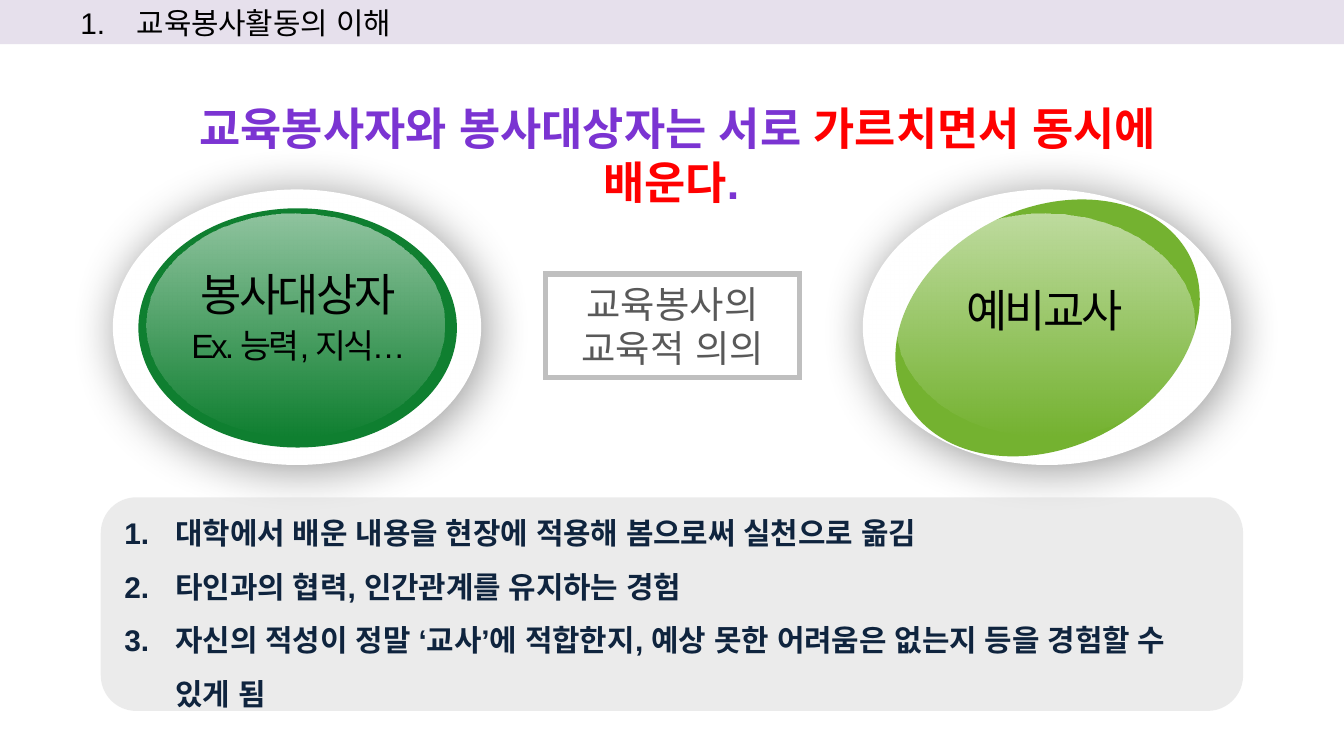
from dataclasses import dataclass

from pptx import Presentation
from pptx.dml.color import RGBColor
from pptx.enum.shapes import MSO_SHAPE
from pptx.enum.text import MSO_ANCHOR, MSO_AUTO_SIZE, PP_ALIGN
from pptx.oxml import parse_xml
from pptx.oxml.ns import nsdecls, qn
from pptx.util import Inches, Pt

RECT, OVAL, ROUND = MSO_SHAPE.RECTANGLE, MSO_SHAPE.OVAL, MSO_SHAPE.ROUNDED_RECTANGLE
LEFT, CENTER, JUSTIFY = PP_ALIGN.LEFT, PP_ALIGN.CENTER, PP_ALIGN.JUSTIFY
TOP, MIDDLE = MSO_ANCHOR.TOP, MSO_ANCHOR.MIDDLE
GROW = MSO_AUTO_SIZE.SHAPE_TO_FIT_TEXT


@dataclass(frozen=True)
class Theme:
    font: str = "Arial"
    black: str = "000000"
    white: str = "FFFFFF"
    band: str = "E6E0EC"
    purple: str = "7B34D2"
    red: str = "FF0000"
    green: str = "0F7F30"
    lime: str = "74B230"
    edge: str = "BFBFBF"
    gray: str = "595959"
    panel: str = "D9D9D9"
    navy: str = "0F243E"
    body: int = 16
    small: int = 18
    label: int = 20
    title: int = 24


class Deck:
    def __init__(self, theme):
        self.theme = theme
        self.prs = Presentation()
        self.prs.slide_width = Inches(10)
        self.prs.slide_height = Inches(10 * 9 / 16)
        self.slide = self.prs.slides.add_slide(self.prs.slide_layouts[6])

    def fade(self, shape, *levels):
        """Set the opacity in percent of each fill colour in turn."""
        for color, level in zip(shape.element.spPr.iter(qn("a:srgbClr")), levels):
            color.append(parse_xml(f'<a:alpha {nsdecls("a")} val="{level * 1000}"/>'))

    def shape(self, kind, x, y, w, h, fill=None):
        item = self.slide.shapes.add_shape(kind, Inches(x), Inches(y), Inches(w), Inches(h))
        item.shadow.inherit = False
        item.line.fill.background()
        if fill:
            item.fill.solid()
            item.fill.fore_color.rgb = RGBColor.from_string(fill)
        else:
            item.fill.background()
        return item

    def box(self, x, y, w, h):
        return self.slide.shapes.add_textbox(Inches(x), Inches(y), Inches(w), Inches(h))

    def frame(self, item, anchor, grow=False):
        frame = item.text_frame
        frame.word_wrap = True
        frame.vertical_anchor = anchor
        if grow:
            frame.auto_size = GROW
        return frame

    def para(self, frame, runs, size, color, align=CENTER, bold=False, hang=None):
        """Add a paragraph; runs are (text, colour or None), hang is (margin, indent)."""
        para = frame.paragraphs[0]
        if para.runs:
            para = frame.add_paragraph()
        para.alignment = align
        font = para.font
        font.name, font.size, font.bold = self.theme.font, Pt(size), bold
        font.color.rgb = RGBColor.from_string(color)
        # Hangul and curly quotes follow the East Asian face
        font._element.find(qn("a:latin")).addnext(
            parse_xml(f'<a:ea {nsdecls("a")} typeface="{self.theme.font}"/>'))
        for text, tint in runs:
            run = para.add_run()
            run.text = text
            if tint:
                run.font.color.rgb = RGBColor.from_string(tint)
        if hang:
            props = para._p.get_or_add_pPr()
            props.set("marL", str(Inches(hang[0])))
            props.set("indent", str(Inches(hang[1])))
        return para

    def gloss(self, x, y, w, h):
        item = self.shape(OVAL, x, y, w, h)
        item.fill.gradient()
        item.fill.gradient_angle = 270
        for stop, place in zip(item.fill.gradient_stops, (0, 1)):
            stop.color.rgb = RGBColor.from_string(self.theme.white)
            stop.position = place
        self.fade(item, 54, 0)

    def badge(self, x, y, color, turn=0):
        """Draw a glossy oval on a white plate that casts a shadow."""
        plate = self.shape(OVAL, x, y, 2.74, 2.05, self.theme.white)
        effects = plate.element.spPr.find(qn("a:effectLst"))
        effects.append(parse_xml(
            f'<a:outerShdw {nsdecls("a")} blurRad="{Pt(26)}" dist="{Pt(3)}" '
            f'dir="2700000" algn="tl" rotWithShape="0">'
            f'<a:srgbClr val="{self.theme.black}"><a:alpha val="41000"/></a:srgbClr>'
            f'</a:outerShdw>'))
        self.gloss(x + 0.04, y + 0.04, 2.67, 2)
        self.shape(OVAL, x + 0.19, y + 0.14, 2.37, 1.78, color).rotation = turn
        self.gloss(x + 0.25, y + 0.18, 2.22, 1.66)

    def label(self, x, y, h, lines):
        frame = self.frame(self.box(x, y, 2.32, h), MIDDLE, True)
        for text, size in lines:
            para = self.para(frame, [(text, None)], size, self.theme.black, hang=(0.38, -0.38))
            para.line_spacing = Pt(15)
            para.space_before = Pt(size / 2)
            para.runs[0].font._element.set("spc", "-150")

    def points(self, frame, lines):
        for text in lines:
            para = self.para(frame, [(text, None)], self.theme.body, self.theme.navy,
                             LEFT, True, (0.38, -0.38))
            para.line_spacing = 1.5
            props = para._p.get_or_add_pPr()
            mark = parse_xml(f'<a:buAutoNum {nsdecls("a")} type="arabicPeriod"/>')
            props.find(qn("a:defRPr")).addprevious(mark)


def main():
    theme = Theme()
    deck = Deck(theme)

    # Header band
    band = deck.shape(RECT, 0, 0, 10, 0.33, theme.band)
    deck.para(deck.frame(band, MIDDLE), [("1.\t교육봉사활동의 이해 ", None)],
              theme.body, theme.black, JUSTIFY, hang=(0.92, -0.42))

    # Two partners
    deck.badge(6.42, 1.41, theme.lime, 333.5)
    deck.badge(0.84, 1.41, theme.green)

    # Centre box
    centre = deck.shape(RECT, 4.06, 2.04, 1.89, 0.77)
    centre.line.color.rgb = RGBColor.from_string(theme.edge)
    centre.line.width = Pt(3)
    centre.element.spPr.find(qn("a:ln")).append(
        parse_xml(f'<a:miter {nsdecls("a")} lim="800000"/>'))
    deck.para(deck.frame(centre, TOP, True), [("교육봉사의 교육적 의의", None)],
              theme.label, theme.gray)

    # Key message
    title = deck.frame(deck.box(0.82, 0.7, 8.35, 0.91), TOP, True)
    deck.para(title, [(" 교육봉사자와 봉사대상자는 서로 ", None),
                      ("가르치면서 동시에 배운다", theme.red), (".", None)],
              theme.title, theme.purple, bold=True)

    # Partner names
    deck.label(1.06, 2.1, 0.69, [("봉사대상자", theme.title),
                                 ("Ex. 능력, 지식…", theme.small)])
    deck.label(6.65, 2.23, 0.34, [("예비교사 ", theme.title)])

    # Numbered benefits
    panel = deck.shape(ROUND, 0.75, 3.7, 8.5, 1.59, theme.panel)
    deck.fade(panel, 50)
    deck.points(deck.frame(panel, MIDDLE), [
        "대학에서 배운 내용을 현장에 적용해 봄으로써 실천으로 옮김",
        "타인과의 협력, 인간관계를 유지하는 경험",
        "자신의 적성이 정말 ‘교사’에 적합한지, 예상 못한 어려움은 없는지 등을 경험할 수 있게 됨",
    ])

    deck.prs.save("out.pptx")


if __name__ == "__main__":
    main()
